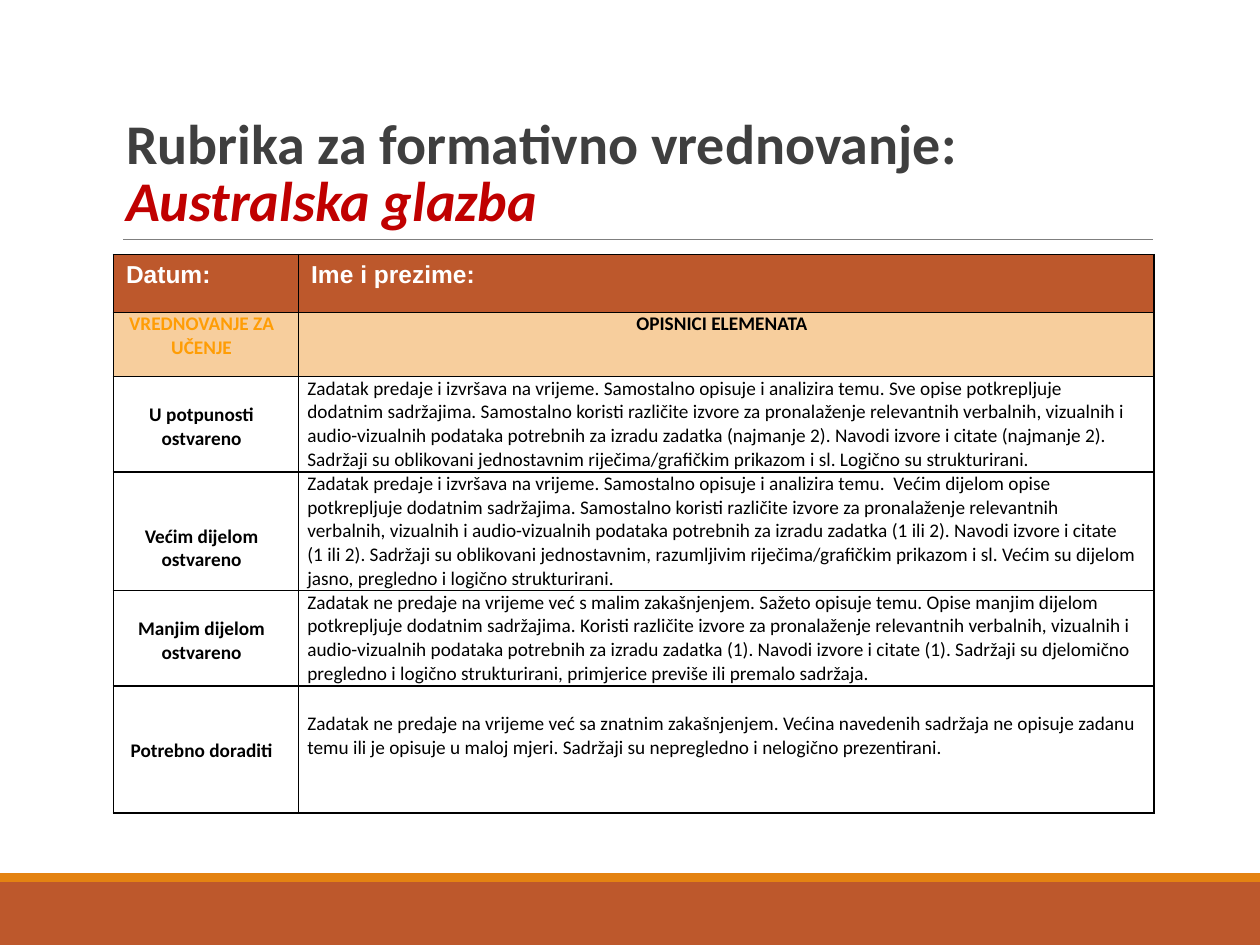
from lxml import etree
from pptx import Presentation
from pptx import util as u
from pptx.dml.color import RGBColor
from pptx.enum import shapes, text
from pptx.oxml import ns

WIDE, HIGH = 10, 7.5
RUST, GOLD, SAND, BLACK = "BD582C", "E48312", "F7CE9D", "000000"
COLS = [1.47, 6.79]
ROWS = [0.46, 0.51, 0.75, 0.94, 0.75, 1.01]
LINE = 0.21  # height of one line of table text

HEADS = ["Datum:", "Ime i prezime:"]
LABELS = [("VREDNOVANJE ZA UČENJE", "FF9D05"), ("OPISNICI ELEMENATA", BLACK)]
# Level, its lines of top offset, description, its lines of top offset
LEVELS = [
    ("U potpunosti ostvareno", 1,
     "Zadatak predaje i izvršava na vrijeme. Samostalno opisuje i analizira "
     "temu. Sve opise potkrepljuje dodatnim sadržajima. Samostalno koristi "
     "različite izvore za pronalaženje relevantnih verbalnih, vizualnih i "
     "audio-vizualnih podataka potrebnih za izradu zadatka (najmanje 2). "
     "Navodi izvore i citate (najmanje 2). Sadržaji su oblikovani "
     "jednostavnim riječima/grafičkim prikazom i sl. Logično su "
     "strukturirani.", 0),
    ("Većim dijelom ostvareno", 2,
     "Zadatak predaje i izvršava na vrijeme. Samostalno opisuje i analizira "
     "temu.  Većim dijelom opise potkrepljuje dodatnim sadržajima. "
     "Samostalno koristi različite izvore za pronalaženje relevantnih "
     "verbalnih, vizualnih i audio-vizualnih podataka potrebnih za izradu "
     "zadatka (1 ili 2). Navodi izvore i citate (1 ili 2). Sadržaji su "
     "oblikovani jednostavnim, razumljivim riječima/grafičkim prikazom i sl. "
     "Većim su dijelom jasno, pregledno i logično strukturirani.", 0),
    ("Manjim dijelom ostvareno", 1,
     "Zadatak ne predaje na vrijeme već s malim zakašnjenjem. Sažeto opisuje "
     "temu. Opise manjim dijelom potkrepljuje dodatnim sadržajima. Koristi "
     "različite izvore za pronalaženje relevantnih verbalnih, vizualnih i "
     "audio-vizualnih podataka potrebnih za izradu zadatka (1). Navodi "
     "izvore i citate (1). Sadržaji su djelomično pregledno i logično "
     "strukturirani, primjerice previše ili premalo sadržaja.", 0),
    ("Potrebno doraditi", 2,
     "Zadatak ne predaje na vrijeme već sa znatnim zakašnjenjem. Većina "
     "navedenih sadržaja ne opisuje zadanu temu ili je opisuje u maloj "
     "mjeri. Sadržaji su nepregledno i nelogično prezentirani.", 1),
]


def color(code):
    return RGBColor.from_string(code)


def style(font, size, code, bold=True, name="Calibri"):
    font.size, font.bold, font.name = u.Pt(size), bold, name
    font.color.rgb = color(code)


def band(slide, top, high, code):
    """Full-width bar."""
    bar = slide.shapes.add_shape(
        shapes.MSO_SHAPE.RECTANGLE, 0, u.Inches(top), u.Inches(WIDE), u.Inches(high))
    bar.shadow.inherit = False
    bar.fill.solid()
    bar.fill.fore_color.rgb = color(code)
    bar.line.fill.background()


def rule(slide, left, right, top):
    """Thin grey line under the title."""
    line = slide.shapes.add_connector(
        shapes.MSO_CONNECTOR.STRAIGHT,
        u.Inches(left), u.Inches(top), u.Inches(right), u.Inches(top))
    line.line.color.rgb = color("7F7F7F")
    line.line.width = u.Pt(0.75)
    etree.SubElement(line._element.spPr, ns.qn("a:effectLst"))


def title(slide, first, second):
    box = slide.shapes.title
    box.left, box.top = u.Inches(0.9), u.Inches(0.31)
    box.width, box.height = u.Inches(8.25), u.Inches(1.59)
    frame = box.text_frame
    frame.auto_size = text.MSO_AUTO_SIZE.NONE
    frame.vertical_anchor = text.MSO_ANCHOR.BOTTOM
    para = frame.paragraphs[0]
    para.alignment = text.PP_ALIGN.LEFT
    para.line_spacing = 0.85
    style(para.font, 32, "3F3F3F")
    for words, code in ((first, "3F3F3F"), (second, "C00000")):
        if para.runs:
            para.add_line_break()
        run = para.add_run()
        run.text = words
        style(run.font, 32, code)
    run.font.italic = True


def border(cell):
    """Black one-point edges, placed ahead of the fill."""
    props = cell._tc.get_or_add_tcPr()
    for spot, side in enumerate(("lnL", "lnR", "lnT", "lnB")):
        edge = etree.Element(ns.qn("a:" + side), w=str(u.Pt(1)))
        fill = etree.SubElement(edge, ns.qn("a:solidFill"))
        etree.SubElement(fill, ns.qn("a:srgbClr"), val=BLACK)
        props.insert(spot, edge)


def write(cell, words, code=BLACK, fill="FFFFFF", bold=True, center=True, drop=0):
    """Body cell; drop is the number of lines the text starts lower."""
    cell.text = words
    cell.margin_left, cell.margin_right = u.Inches(0.07), u.Inches(0.14)
    cell.margin_top, cell.margin_bottom = u.Inches(drop * LINE), 0
    cell.fill.solid()
    cell.fill.fore_color.rgb = color(fill)
    para = cell.text_frame.paragraphs[0]
    para.alignment = text.PP_ALIGN.CENTER if center else text.PP_ALIGN.LEFT
    para.space_before = u.Pt(1.2)
    style(para.font, 11, code, bold)
    border(cell)


def head(cell, words):
    cell.text = words
    cell.fill.solid()
    cell.fill.fore_color.rgb = color(RUST)
    style(cell.text_frame.paragraphs[0].font, 14, "FFFFFF", name="Arial")
    border(cell)


def rubric(slide):
    table = slide.shapes.add_table(
        len(ROWS), len(COLS), u.Inches(0.9), u.Inches(2.02),
        u.Inches(sum(COLS)), u.Inches(sum(ROWS))).table
    for col, wide in zip(table.columns, COLS):
        col.width = u.Inches(wide)
    for row, high in zip(table.rows, ROWS):
        row.height = u.Inches(high)
    for col, words in enumerate(HEADS):
        head(table.cell(0, col), words)
    for col, (words, code) in enumerate(LABELS):
        write(table.cell(1, col), words, code, SAND)
    for row, (level, drop, about, fall) in enumerate(LEVELS, 2):
        write(table.cell(row, 0), level, drop=drop)
        write(table.cell(row, 1), about, bold=False, center=False, drop=fall)


def main():
    deck = Presentation()
    deck.slide_width, deck.slide_height = u.Inches(WIDE), u.Inches(HIGH)
    slide = deck.slides.add_slide(deck.slide_layouts[5])
    # Footer bands and title rule
    band(slide, 7, 0.5, RUST)
    band(slide, 6.93, 0.07, GOLD)
    rule(slide, 0.98, 9.15, 1.9)
    # Content
    title(slide, "Rubrika za formativno vrednovanje:", "Australska glazba")
    rubric(slide)
    deck.save("out.pptx")


if __name__ == "__main__":
    main()
